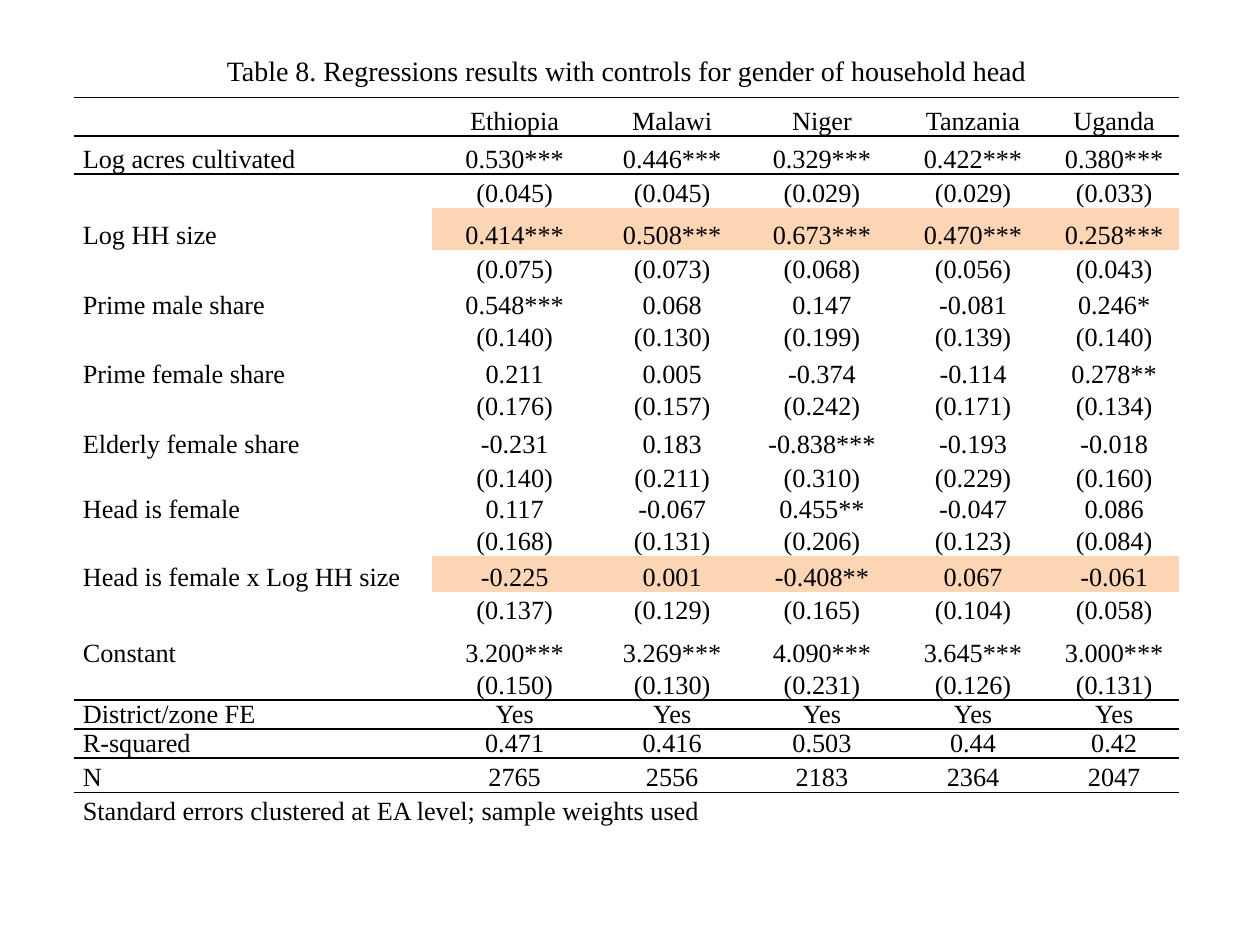
from lxml import etree
from pptx import Presentation
from pptx.dml.color import RGBColor
from pptx.enum.text import MSO_ANCHOR, PP_ALIGN
from pptx.oxml.ns import qn
from pptx.util import Cm, Pt

LEFT, CENTER = PP_ALIGN.LEFT, PP_ALIGN.CENTER
MIDDLE, BOTTOM = MSO_ANCHOR.MIDDLE, MSO_ANCHOR.BOTTOM
COLORS = {"text": "000000", "rule": "000000", "highlight": "FCD5B5"}
FONT = "Times New Roman"
PLAIN_STYLE = "{2D5ABB26-0587-4C30-8999-92F81FD0307C}"

ROWS = [
    ["Table 8. Regressions results with controls for gender of household head"],
    ["", "Ethiopia", "Malawi", "Niger", "Tanzania", "Uganda"],
    ["Log acres cultivated", "0.530***", "0.446***", "0.329***", "0.422***", "0.380***"],
    ["", "(0.045)", "(0.045)", "(0.029)", "(0.029)", "(0.033)"],
    ["Log HH size", "0.414***", "0.508***", "0.673***", "0.470***", "0.258***"],
    ["", "(0.075)", "(0.073)", "(0.068)", "(0.056)", "(0.043)"],
    ["Prime male share", "0.548***", "0.068", "0.147", "-0.081", "0.246*"],
    ["", "(0.140)", "(0.130)", "(0.199)", "(0.139)", "(0.140)"],
    ["Prime female share", "0.211", "0.005", "-0.374", "-0.114", "0.278**"],
    ["", "(0.176)", "(0.157)", "(0.242)", "(0.171)", "(0.134)"],
    ["Elderly female share", "-0.231", "0.183", "-0.838***", "-0.193", "-0.018"],
    ["", "(0.140)", "(0.211)", "(0.310)", "(0.229)", "(0.160)"],
    ["Head is female", "0.117", "-0.067", "0.455**", "-0.047", "0.086"],
    ["", "(0.168)", "(0.131)", "(0.206)", "(0.123)", "(0.084)"],
    ["Head is female x Log HH size", "-0.225", "0.001", "-0.408**", "0.067", "-0.061"],
    ["", "(0.137)", "(0.129)", "(0.165)", "(0.104)", "(0.058)"],
    ["Constant", "3.200***", "3.269***", "4.090***", "3.645***", "3.000***"],
    ["", "(0.150)", "(0.130)", "(0.231)", "(0.126)", "(0.131)"],
    ["District/zone FE"] + ["Yes"] * 5,
    ["R-squared", "0.471", "0.416", "0.503", "0.44", "0.42"],
    ["N", "2765", "2556", "2183", "2364", "2047"],
    ["Standard errors clustered at EA level; sample weights used"],
]
COL_WIDTHS = [7.22, 3.33, 3.02, 3.02, 3.07, 2.62]
ROW_HEIGHTS = [1.03, 0.77, 0.77, 0.69, 0.85, 0.69, 0.72, 0.57, 0.73, 0.6, 0.77,
               0.69, 0.62, 0.6, 0.73, 0.66, 0.86, 0.57, 0.57, 0.58, 0.69, 0.69]
RULED_BELOW = {0, 1, 2, 17, 18, 19, 20}
HIGHLIGHTED = {"Log HH size", "Head is female x Log HH size"}


def rule_below(cell):
    tc_pr = cell._tc.get_or_add_tcPr()
    ln = etree.Element(qn("a:lnB"), w=str(Pt(1)))
    fill = etree.SubElement(ln, qn("a:solidFill"))
    etree.SubElement(fill, qn("a:srgbClr"), val=COLORS["rule"])
    tc_pr.insert(0, ln)


def write_cell(cell, text, size, align, anchor):
    margins = {"margin_left": Cm(0.18), "margin_right": Cm(0.18),
               "margin_top": 0, "margin_bottom": 0}
    for name, value in {**margins, "vertical_anchor": anchor}.items():
        setattr(cell, name, value)
    p = cell.text_frame.paragraphs[0]
    p.alignment = align
    if not text:  # keeps an empty cell from stretching its row
        etree.SubElement(p._p, qn("a:endParaRPr"), sz=str(size * 100))
        return
    r = p.add_run()
    r.text = text
    for name, value in {"name": FONT, "size": Pt(size)}.items():
        setattr(r.font, name, value)
    r.font.color.rgb = RGBColor.from_string(COLORS["text"])


def regression_table(s, left, top, width, height):
    frame = s.shapes.add_table(len(ROWS), len(COL_WIDTHS),
                               Cm(left), Cm(top), Cm(width), Cm(height))
    table = frame.table
    table.first_row = table.horz_banding = False
    table._tbl.tblPr.find(qn("a:tableStyleId")).text = PLAIN_STYLE
    for col, share in zip(table.columns, COL_WIDTHS):
        col.width = Cm(width * share / sum(COL_WIDTHS))
    for row, share in zip(table.rows, ROW_HEIGHTS):
        row.height = Cm(height * share / sum(ROW_HEIGHTS))

    last = len(COL_WIDTHS) - 1
    for i, values in enumerate(ROWS):
        if len(values) == 1:
            table.cell(i, 0).merge(table.cell(i, last))
        for j in range(last + 1):
            cell = table.cell(i, j)
            is_title = i == 0
            write_cell(cell, values[j] if j < len(values) else "",
                       16 if is_title else 15,
                       CENTER if is_title or j else LEFT,
                       MIDDLE if is_title else BOTTOM)
            if j and values[0] in HIGHLIGHTED:
                cell.fill.solid()
                cell.fill.fore_color.rgb = RGBColor.from_string(COLORS["highlight"])
            else:
                cell.fill.background()
            if i in RULED_BELOW:
                rule_below(cell)


def main():
    prs = Presentation()
    prs.slide_width, prs.slide_height = Cm(25.4), Cm(19.05)
    s = prs.slides.add_slide(prs.slide_layouts[6])
    regression_table(s, 1.49, 0.94, sum(COL_WIDTHS), sum(ROW_HEIGHTS))
    prs.save("out.pptx")


if __name__ == "__main__":
    main()
